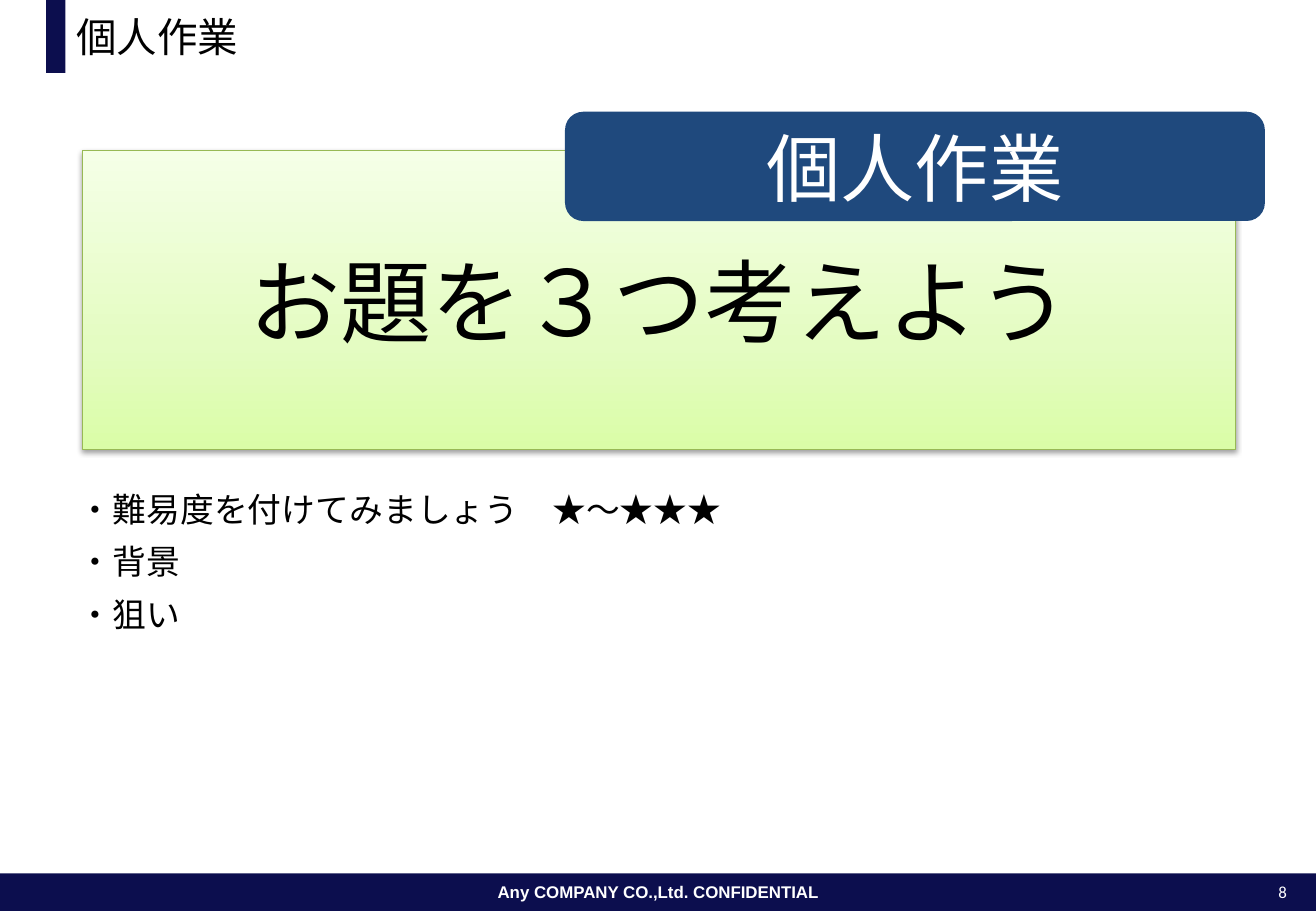
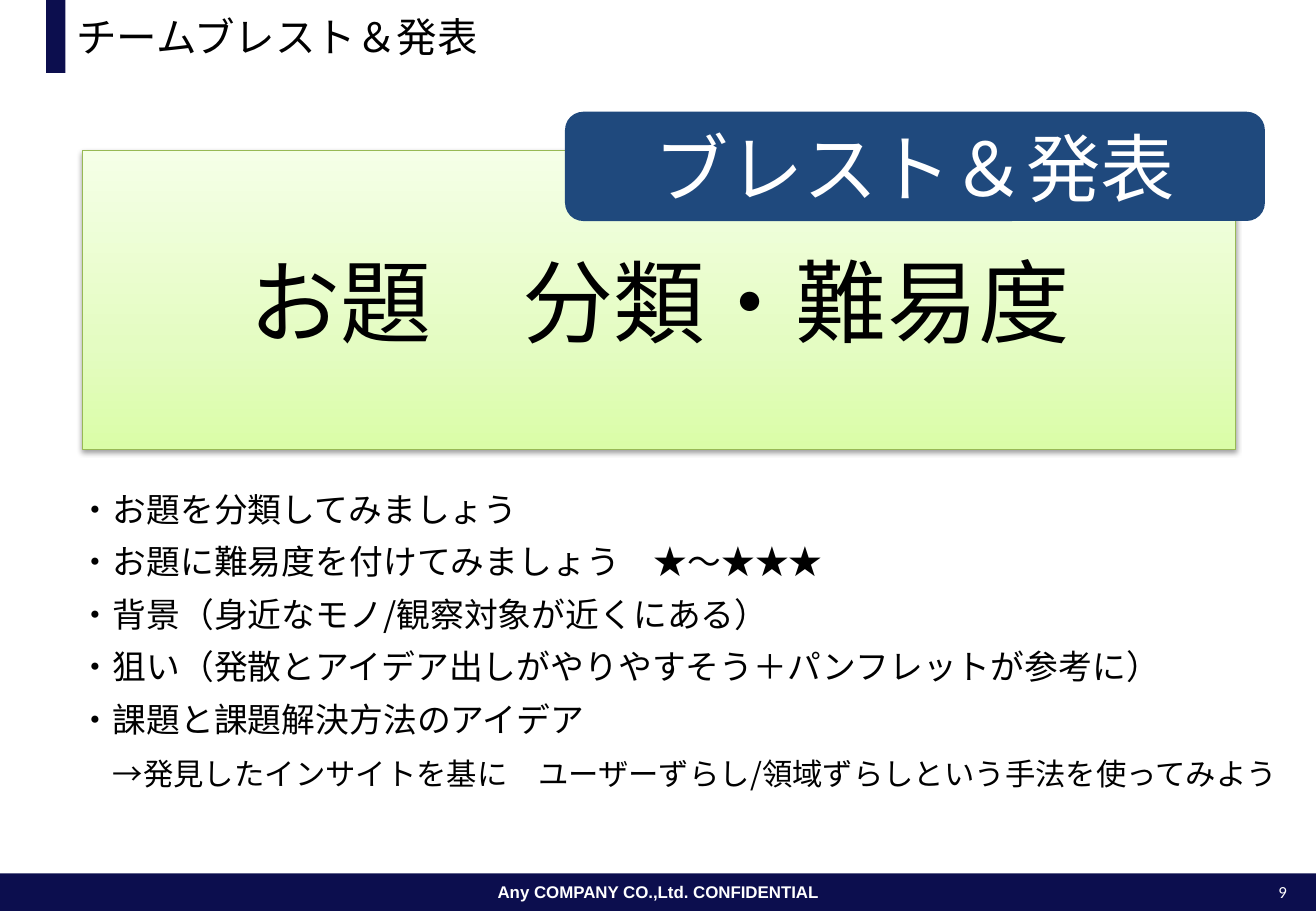
from copy import deepcopy

from lxml import etree
from pptx import Presentation
from pptx import util as u
from pptx.dml.color import RGBColor
from pptx.enum import shapes, text
from pptx.oxml import ns

NAVY, BLUE, GREEN = "0C0E4E", "1F497D", "98B955"
BLACK, WHITE = "000000", "FFFFFF"
GRADIENT = [(0, "DAFDA7"), (0.35, "E4FCC2"), (1, "F5FFE7")]
JAPANESE = "Noto Sans CJK JP"
FOOTER = "Any COMPANY CO.,Ltd. CONFIDENTIAL"
WIDTH, HEIGHT = 10.83, 7.5
FIRST_NUMBER = 8

SLIDES = [
    {
        "title": "個人作業",
        "label": "個人作業",
        "theme": "お題を３つ考えよう",
        "body_height": 2.35,
        "points": [
            [("・難易度を付けてみましょう　★～★★★", 20)],
            [("・背景", 20)],
            [("・狙い", 20)],
        ],
    },
    {
        "title": "チームブレスト＆発表",
        "label": "ブレスト＆発表",
        "theme": "お題　分類・難易度",
        "body_height": 3.66,
        "points": [
            [("・お題を分類してみましょう", 20)],
            [("・お題に難易度を付けてみましょう　★～★★★", 20)],
            [("・背景（身近なモノ/観察対象が近くにある）", 20)],
            [("・狙い（発散とアイデア出しがやりやすそう＋パンフレットが参考に）", 20)],
            [("・課題と課題解決方法のアイデア", 20)],
            [
                ("　", 20),
                ("→発見したインサイトを基に　ユーザーずらし/領域ずらしという手法を使ってみよう", 18),
            ],
        ],
    },
]


def color(value):
    """Turn a hex string into a colour."""
    return RGBColor.from_string(value)


def add_run(paragraph, content, size, ink=BLACK, font=JAPANESE, bold=False):
    """Add one run, with its font set for Latin and East Asian letters."""
    run = paragraph.add_run()
    run.text = content
    run.font.size = u.Pt(size)
    run.font.bold = bold
    run.font.color.rgb = color(ink)
    run.font.name = font
    etree.SubElement(run.font._element, ns.qn("a:ea"), typeface=font)


def add_block(slide, kind, box, fill):
    """Add a flat preset shape without outline."""
    shape = slide.shapes.add_shape(kind, *map(u.Inches, box))
    shape.shadow.inherit = False
    shape.fill.solid()
    shape.fill.fore_color.rgb = color(fill)
    shape.line.fill.background()
    return shape


def add_text_box(slide, box, wrap=True, grow=False):
    """Add an empty text box and return its text frame."""
    frame = slide.shapes.add_textbox(*map(u.Inches, box)).text_frame
    frame.word_wrap = wrap
    if grow:
        frame.auto_size = text.MSO_AUTO_SIZE.SHAPE_TO_FIT_TEXT
    return frame


def write_centered(shape, content, size, **style):
    """Write one line in the middle of a shape."""
    frame = shape.text_frame
    frame.vertical_anchor = text.MSO_ANCHOR.MIDDLE
    paragraph = frame.paragraphs[0]
    paragraph.alignment = text.PP_ALIGN.CENTER
    add_run(paragraph, content, size, **style)


def apply_gradient(shape):
    """Fill a shape with the green gradient, darkest at the bottom."""
    shape.fill.gradient()
    shape.fill.gradient_angle = 90
    stop_list = shape._element.spPr.find(".//" + ns.qn("a:gsLst"))
    stop_list.append(deepcopy(stop_list[-1]))
    for stop, (position, value) in zip(shape.fill.gradient_stops, GRADIENT):
        stop.position = position
        stop.color.rgb = color(value)


def apply_shadow(shape):
    """Give a shape a soft shadow below it."""
    effects = shape._element.spPr.find(ns.qn("a:effectLst"))
    shadow = etree.SubElement(
        effects, ns.qn("a:outerShdw"), blurRad=str(u.Pt(3.1)), dist=str(u.Pt(1.6)),
        dir="5400000", rotWithShape="0")
    ink = etree.SubElement(shadow, ns.qn("a:srgbClr"), val=BLACK)
    etree.SubElement(ink, ns.qn("a:alpha"), val="38000")


def add_frame(slide, title, number):
    """Add the footer band, page number, title marker and title."""
    rectangle = shapes.MSO_SHAPE.RECTANGLE
    band = add_block(slide, rectangle, (0, 7.19, WIDTH, 0.31), NAVY)
    band.text_frame.word_wrap = False
    write_centered(band, FOOTER, 10, ink=WHITE, font="Arial", bold=True)
    add_block(slide, rectangle, (0.38, 0, 0.16, 0.6), NAVY)

    page = add_text_box(slide, (10.28, 7.21, 0.41, 0.27), wrap=False, grow=True)
    page.paragraphs[0].alignment = text.PP_ALIGN.RIGHT
    add_run(page.paragraphs[0], str(number), 10, WHITE, "Calibri")

    heading = add_text_box(slide, (0.53, 0, 10.16, 0.6))
    heading.vertical_anchor = text.MSO_ANCHOR.MIDDLE
    add_run(heading.paragraphs[0], title, 24)


def add_theme(slide, content):
    """Add the green panel with the theme of the exercise."""
    panel = add_block(slide, shapes.MSO_SHAPE.RECTANGLE, (0.68, 1.24, 9.49, 2.46), WHITE)
    apply_gradient(panel)
    apply_shadow(panel)
    panel.line.color.rgb = color(GREEN)
    panel.line.width = u.Pt(0.75)
    write_centered(panel, content, 54)


def add_points(slide, points, height):
    """Add the list of points below the panel."""
    frame = add_text_box(slide, (0.53, 3.84, 10.66, height), grow=True)
    frame.margin_left = frame.margin_right = u.Inches(0.12)
    frame.margin_top = frame.margin_bottom = u.Inches(0.08)
    for index, runs in enumerate(points):
        paragraph = frame.add_paragraph() if index else frame.paragraphs[0]
        paragraph.line_spacing = 1.3
        for content, size in runs:
            add_run(paragraph, content, size)


def add_label(slide, content):
    """Add the blue label over the corner of the panel."""
    label = add_block(
        slide, shapes.MSO_SHAPE.ROUNDED_RECTANGLE, (4.65, 0.92, 5.76, 0.9), BLUE)
    write_centered(label, content, 44, ink=WHITE)


def main():
    """Build and save the presentation."""
    presentation = Presentation()
    presentation.slide_width = u.Inches(WIDTH)
    presentation.slide_height = u.Inches(HEIGHT)
    for number, content in enumerate(SLIDES, FIRST_NUMBER):
        slide = presentation.slides.add_slide(presentation.slide_layouts[6])
        add_frame(slide, content["title"], number)
        add_theme(slide, content["theme"])
        add_points(slide, content["points"], content["body_height"])
        add_label(slide, content["label"])
    presentation.save("out.pptx")


if __name__ == "__main__":
    main()
